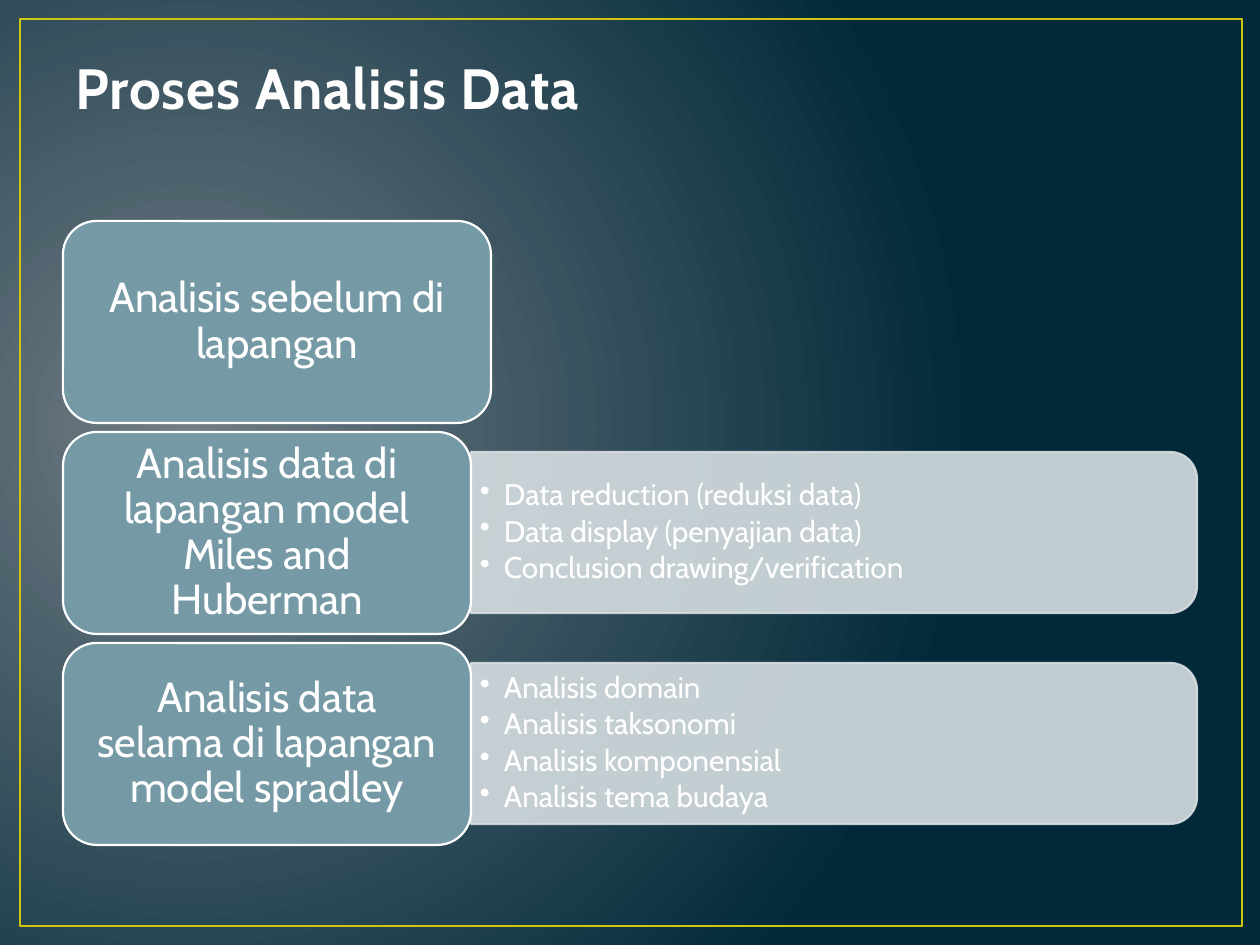
from pptx import Presentation
from pptx.dml.color import RGBColor
from pptx.enum.shapes import MSO_SHAPE
from pptx.enum.text import MSO_ANCHOR, PP_ALIGN
from pptx.oxml import parse_xml
from pptx.oxml.ns import nsdecls, qn
from pptx.util import Inches, Pt

PX_PER_INCH = 126
FONT = "Cabin"
WHITE, TEAL, MIST, YELLOW = "FFFFFF", "759AA5", "D6DEE1", "CFC60D"

LEFT, FIRST_TOP, ROW_STEP, ROW_HEIGHT = 63, 221, 211, 202
BAR_LEFT, BAR_WIDTH, BAR_HEIGHT = 471, 726, 161

# Each row: lines of the label (None wraps by itself), then its bullets
ROWS = [
    (["Analisis sebelum di lapangan"], []),
    (["Analisis data di lapangan model Miles and", "Huberman"],
     ["Data reduction (reduksi data)", "Data display (penyajian data)",
      "Conclusion drawing/verification"]),
    (["Analisis data", "selama di lapangan model spradley"],
     ["Analisis domain", "Analisis taksonomi", "Analisis komponensial",
      "Analisis tema budaya"]),
]


def px(length):
    return round(length * Inches(1) / PX_PER_INCH)


def color(value):
    return RGBColor.from_string(value)


def add_box(page, kind, left, top, width, height, fill, line, points):
    box = page.shapes.add_shape(kind, px(left), px(top), px(width), px(height))
    box.shadow.inherit = False
    if fill:
        box.fill.solid()
        box.fill.fore_color.rgb = color(fill)
    else:
        box.fill.background()
    box.line.color.rgb = color(line)
    box.line.width = Pt(points)
    return box


def add_text_box(page, left, top, width, height, anchor):
    box = page.shapes.add_textbox(px(left), px(top), px(width), px(height))
    box.text_frame.word_wrap = True
    box.text_frame.vertical_anchor = anchor
    return box


def add_span(para, text, size, value=WHITE, bold=False):
    span = para.add_run()
    span.text = text
    span.font.name = FONT
    span.font.size = Pt(size)
    span.font.bold = bold
    span.font.color.rgb = color(value)
    return span


def set_background(page):
    fill = page.background.fill
    fill.gradient()
    for stop, value in zip(fill.gradient_stops, ("717C84", "01293A")):
        stop.color.rgb = color(value)
    # Radial gradient centred near the left edge
    linear = next(page.background._cSld.iter(qn("a:lin")))
    linear.getparent().replace(linear, parse_xml(
        f'<a:path {nsdecls("a")} path="circle">'
        '<a:fillToRect l="15000" t="50000" r="85000" b="60000"/></a:path>'))


def add_title(page, text):
    box = add_text_box(page, 63, 38, 1134, 157, MSO_ANCHOR.BOTTOM)
    box.text_frame.margin_bottom = px(74)
    span = add_span(box.text_frame.paragraphs[0], text, 32.4, "FEFEFE", True)
    span.font._element.set("spc", "50")


def add_label(page, lines, top, width):
    box = add_box(page, MSO_SHAPE.ROUNDED_RECTANGLE, LEFT, top, width,
                  ROW_HEIGHT, TEAL, WHITE, 1.25)
    frame = box.text_frame
    frame.word_wrap = True
    frame.vertical_anchor = MSO_ANCHOR.MIDDLE
    frame.margin_top = frame.margin_bottom = 0
    para = frame.paragraphs[0]
    para.alignment = PP_ALIGN.CENTER
    para.line_spacing = 0.9
    for index, line in enumerate(lines):
        if index:
            para.add_line_break()
        add_span(para, line, 24)


def add_bar(page, top):
    # A quarter turn puts the two rounded corners on the right
    left = BAR_LEFT + (BAR_WIDTH - BAR_HEIGHT) / 2
    turned_top = top - (BAR_WIDTH - BAR_HEIGHT) / 2
    bar = add_box(page, MSO_SHAPE.ROUND_2_SAME_RECTANGLE, left, turned_top,
                  BAR_HEIGHT, BAR_WIDTH, MIST, MIST, 1.25)
    bar.rotation = 90
    for tint in bar._element.spPr.iter(qn("a:srgbClr")):
        tint.append(parse_xml(f'<a:alpha {nsdecls("a")} val="90000"/>'))


def add_bullets(page, items, top):
    box = add_text_box(page, BAR_LEFT, top, 718, 145, MSO_ANCHOR.MIDDLE)
    frame = box.text_frame
    frame.margin_left = frame.margin_right = px(9)
    frame.margin_top = frame.margin_bottom = px(5)
    for index, item in enumerate(items):
        para = frame.add_paragraph() if index else frame.paragraphs[0]
        para.line_spacing = 0.9
        para.space_after = Pt(2.5)
        properties = para._p.get_or_add_pPr()
        properties.set("marL", str(px(24)))
        properties.set("indent", str(-px(24)))
        properties.append(parse_xml(f'<a:buChar {nsdecls("a")} char="•"/>'))
        add_span(para, item, 17)


def main():
    deck = Presentation()
    deck.slide_width, deck.slide_height = px(1260), px(945)
    page = deck.slides.add_slide(deck.slide_layouts[6])

    # Backdrop, frame and title
    set_background(page)
    add_box(page, MSO_SHAPE.RECTANGLE, 20, 19, 1222, 907, None, YELLOW, 1.5)
    add_title(page, "Proses Analisis Data")

    # Stages, with a bar behind the label where there are bullets
    for index, (lines, items) in enumerate(ROWS):
        top = FIRST_TOP + index * ROW_STEP
        if items:
            add_bar(page, top + 20)
            add_bullets(page, items, top + 28)
        add_label(page, lines, top, 408 if items else 428)

    deck.save("out.pptx")


if __name__ == "__main__":
    main()
